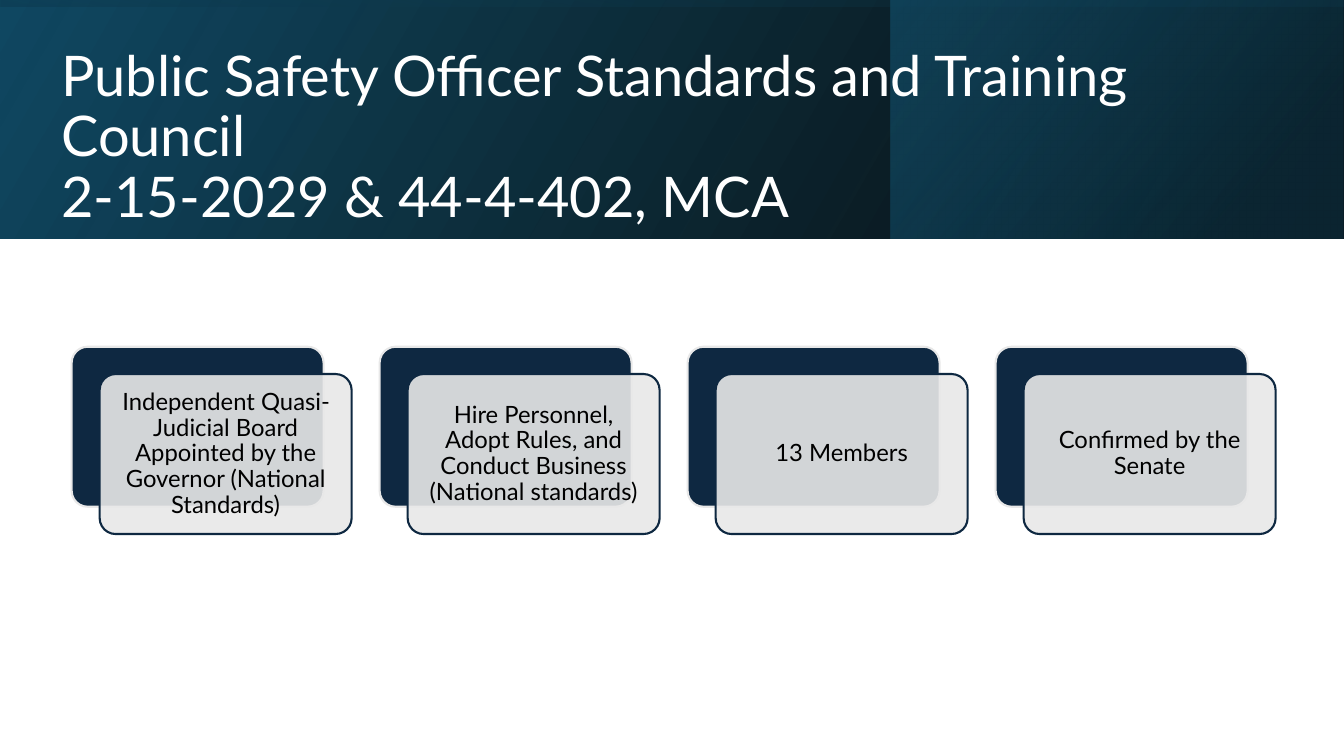
from lxml.etree import SubElement as Sub
from pptx import Presentation
from pptx.dml.color import RGBColor
from pptx.enum.shapes import MSO_SHAPE as Kind
from pptx.enum.text import MSO_ANCHOR as Anchor, PP_ALIGN as Align
from pptx.oxml.ns import qn
from pptx.util import Pt

WIDE, HIGH = 960, 540
BAND = 170.64
BLACK = RGBColor(0x00, 0x00, 0x00)
WHITE = RGBColor(0xFF, 0xFF, 0xFF)
NAVY = RGBColor(0x0E, 0x28, 0x41)
GRAY = RGBColor(0xE8, 0xE8, 0xE8)
BLUE = RGBColor(0x10, 0x48, 0x62)
DEEP = RGBColor(0x0B, 0x30, 0x41)
TEAL = RGBColor(0x15, 0x60, 0x82)

TITLE = ("Public Safety Officer Standards and Training Council\v"
         "2-15-2029 & 44-4-402, MCA")
FACTS = [
    "Independent Quasi-Judicial Board Appointed by the Governor (National Standards)",
    "Hire Personnel, Adopt Rules, and Conduct Business (National standards)",
    "13 Members",
    "Confirmed by the Senate",
]


def fade(color, alpha):
    """Give a colour element an opacity in percent."""
    Sub(color, qn("a:alpha"), val=str(alpha * 1000))


class Page:
    font = "Lato"

    def __init__(self, slide):
        self.shapes = slide.shapes

    def shape(self, kind, x, y, w, h):
        item = self.shapes.add_shape(kind, Pt(x), Pt(y), Pt(w), Pt(h))
        item.shadow.inherit = False
        return item

    def blend(self, x, y, w, h, angle, stops, turn=0):
        """Draw a mirrored rectangle with a gradient of (place, colour, opacity)."""
        rect = self.shape(Kind.RECTANGLE, x, y, w, h)
        rect.rotation = turn
        rect.line.fill.background()
        rect.fill.background()
        props = rect._element.spPr
        props.find(qn("a:xfrm")).set("flipH", "1")
        none = props.find(qn("a:noFill"))
        grad = none.makeelement(qn("a:gradFill"), {"rotWithShape": "1"})
        props.replace(none, grad)
        row = Sub(grad, qn("a:gsLst"))
        for place, color, alpha in stops:
            stop = Sub(row, qn("a:gs"), pos=str(place * 1000))
            fade(Sub(stop, qn("a:srgbClr"), val=str(color)), alpha)
        Sub(grad, qn("a:lin"), ang=str(angle * 60000), scaled="0")

    def label(self, item, text, size, color, align):
        frame = item.text_frame
        frame.word_wrap = True
        frame.vertical_anchor = Anchor.MIDDLE
        frame.text = text
        para = frame.paragraphs[0]
        para.alignment = align
        para.line_spacing = 0.9
        for run in para.runs:
            run.font.name = self.font
            run.font.size = Pt(size)
            run.font.color.rgb = color
        return frame

    def title(self, text, x, y, w, h):
        box = self.shapes.add_textbox(Pt(x), Pt(y), Pt(w), Pt(h))
        self.label(box, text, 40, WHITE, Align.LEFT)

    def plate(self, x, y, w, h, fill, line):
        item = self.shape(Kind.ROUNDED_RECTANGLE, x, y, w, h)
        item.adjustments[0] = 0.1
        item.fill.solid()
        item.fill.fore_color.rgb = fill
        item.line.color.rgb = line
        item.line.width = Pt(1.5)
        return item

    def card(self, text, x, y, w=180, h=114.3):
        self.plate(x, y, w, h, NAVY, GRAY)
        front = self.plate(x + 20, y + 19.5, w, h, GRAY, NAVY)
        fade(front._element.spPr.find(qn("a:solidFill"))[0], 90)
        frame = self.label(front, text, 17, BLACK, Align.CENTER)
        frame.margin_left = frame.margin_right = Pt(5)
        frame.margin_top = frame.margin_bottom = Pt(5)


def main():
    deck = Presentation()
    deck.slide_width, deck.slide_height = Pt(WIDE), Pt(HIGH)
    page = Page(deck.slides.add_slide(deck.slide_layouts[6]))

    page.blend(0, 0, WIDE, BAND, 330, [(0, BLACK, 96), (100, BLUE, 100)])
    page.blend(636.5, 0, 322.8, BAND, 320, [(19, DEEP, 68), (100, TEAL, 48)])
    side = (WIDE - BAND) / 2
    page.blend(side, -side, BAND, WIDE, 350,
               [(23, BLUE, 16), (99, BLACK, 45)], turn=270)

    page.title(TITLE, 36.7, 27.4, 874, 143.3)
    for i, fact in enumerate(FACTS):
        page.card(fact, 51.2 + 220 * i, 247.7)
    deck.save("out.pptx")


if __name__ == "__main__":
    main()
